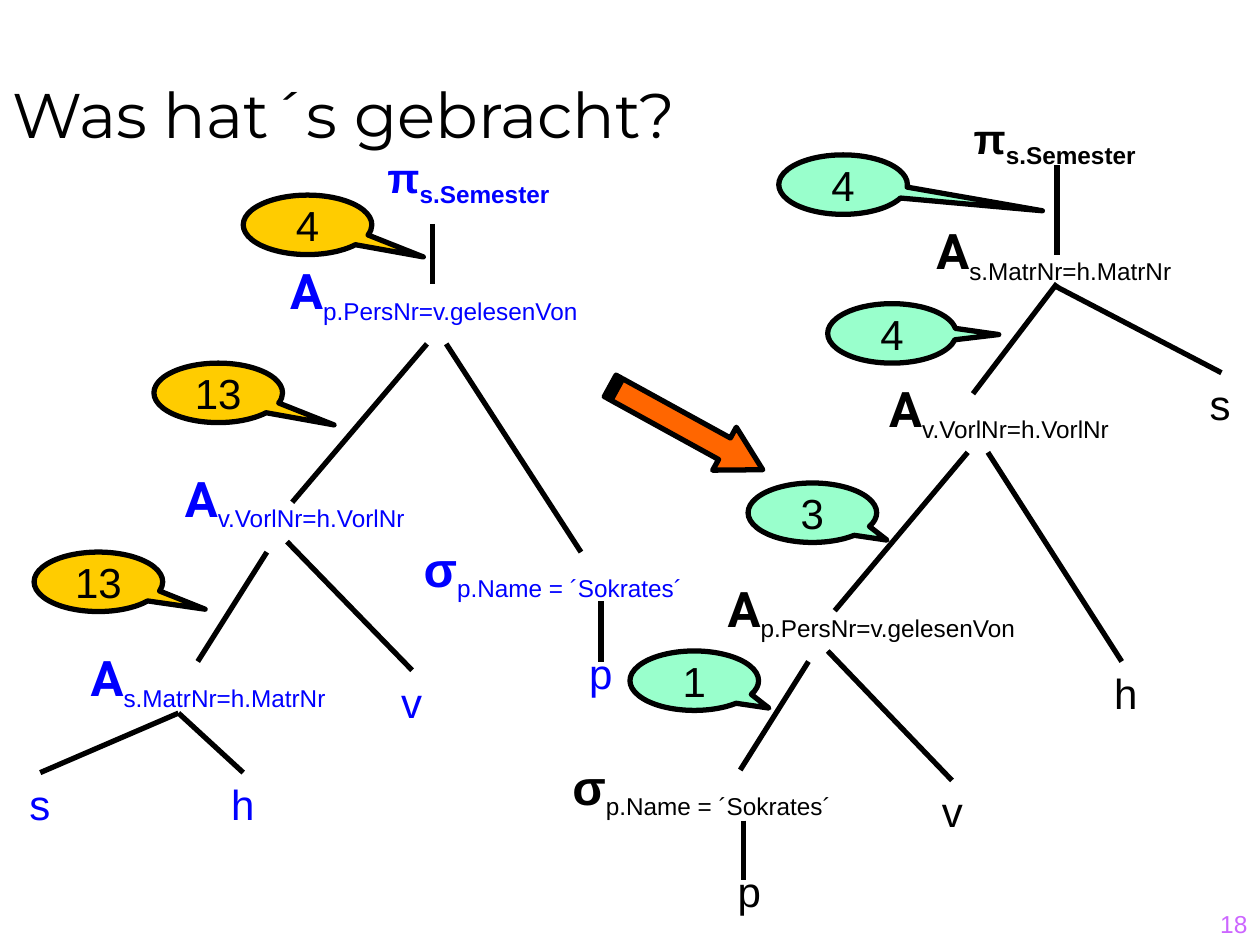
from lxml import etree
from pptx import Presentation
from pptx.dml.color import RGBColor
from pptx.enum.shapes import MSO_CONNECTOR, MSO_SHAPE
from pptx.enum.text import MSO_ANCHOR, MSO_AUTO_SIZE, PP_ALIGN
from pptx.oxml.ns import qn
from pptx.util import Pt

LINE = MSO_CONNECTOR.STRAIGHT
CALLOUT = MSO_SHAPE.OVAL_CALLOUT
ARROW = MSO_SHAPE.STRIPED_RIGHT_ARROW
LEFT, CENTER, RIGHT = PP_ALIGN.LEFT, PP_ALIGN.CENTER, PP_ALIGN.RIGHT
BOTTOM, MIDDLE, TOP = MSO_ANCHOR.BOTTOM, MSO_ANCHOR.MIDDLE, MSO_ANCHOR.TOP
GROW = MSO_AUTO_SIZE.SHAPE_TO_FIT_TEXT
NO_FIT = MSO_AUTO_SIZE.NONE

BLACK = RGBColor(0x00, 0x00, 0x00)
BLUE = RGBColor(0x00, 0x00, 0xFF)
ORANGE = RGBColor(0xFF, 0x66, 0x00)
YELLOW = RGBColor(0xFF, 0xCC, 0x00)
MINT = RGBColor(0x99, 0xFF, 0xCC)
PURPLE = RGBColor(0xCC, 0x66, 0xFF)

BY_PERSON = "p.PersNr=v.gelesenVon"
BY_LECTURE = "v.VorlNr=h.VorlNr"
BY_STUDENT = "s.MatrNr=h.MatrNr"
SOKRATES = "p.Name = ´Sokrates´"
SEMESTER = "s.Semester"

BEFORE = {
    "color": BLUE,
    "fill": YELLOW,
    "operators": [
        ("π", SEMESTER, 178.5, 83, 178.5),
        ("A", BY_PERSON, 127.5, 145.5, 241),
        ("A", BY_LECTURE, 48, 264, 241),
        ("σ", SOKRATES, 224, 304, 184),
        ("A", BY_STUDENT, 0, 366.5, 238),
    ],
    "relations": [("s", 0, 441.5), ("h", 116, 441.5),
                  ("v", 212.5, 383), ("p", 320.5, 366.5)],
    "edges": [
        (247, 128, 247, 162), (244, 196.5, 167, 287),
        (255, 196.5, 332, 315.5), (343.5, 343.5, 343.5, 378),
        (152.5, 315.5, 113, 378), (164, 309.5, 235.5, 383),
        (102, 407.5, 23, 441.5), (102, 407.5, 139, 441.5),
    ],
    "counts": [("4", 139, 111.5, 0.9, 0.54),
               ("13", 88, 207.5, 0.9, 0.54),
               ("13", 19.5, 315.5, 0.83, 0.46)],
}

AFTER = {
    "color": BLACK,
    "fill": MINT,
    "operators": [
        ("π", SEMESTER, 513.5, 60.5, 178.5),
        ("A", BY_STUDENT, 496, 122.5, 212.5),
        ("A", BY_LECTURE, 450.5, 213, 241),
        ("A", BY_PERSON, 377.5, 327, 241),
        ("σ", SOKRATES, 309, 428.5, 184),
    ],
    "relations": [("s", 674.5, 213), ("h", 620.5, 378),
                  ("v", 521.5, 445.5), ("p", 405.5, 491)],
    "edges": [
        (604, 94.5, 604, 145.5), (604, 162, 556, 225),
        (603, 163.5, 698, 213), (553, 258.5, 477, 349),
        (564.5, 258.5, 641, 378), (462, 378, 423, 440),
        (473, 372, 544, 446), (425, 469, 425, 503),
    ],
    "counts": [("4", 445, 88.5, 1.55, 0.44),
               ("4", 473, 173.5, 0.83, 0.02),
               ("3", 427.5, 276, 0.58, 0.46),
               ("1", 360, 372, 0.58, 0.46)],
}


def set_font(font, size, color, name="Arial", bold=False):
    font.size, font.name, font.bold = Pt(size), name, bold
    font.color.rgb = color


def add_text(s, x, y, w, h, align=CENTER, anchor=TOP, fit=GROW):
    tf = s.shapes.add_textbox(Pt(x), Pt(y), Pt(w), Pt(h)).text_frame
    tf.word_wrap, tf.auto_size, tf.vertical_anchor = True, fit, anchor
    p = tf.paragraphs[0]
    p.alignment = align
    return p


def add_operator(s, symbol, condition, x, y, w, color):
    projection = symbol == "π"
    p = add_text(s, x, y, w, 36 if projection else 41)
    r = p.add_run()
    r.text = symbol
    set_font(r.font, 24 if projection else 28, color,
             "Roboto" if symbol == "A" else "Arial", True)
    r = p.add_run()
    r.text = condition
    set_font(r.font, 24, color, bold=projection)
    r._r.get_or_add_rPr().set("baseline", "-25000")


def add_relation(s, name, x, y, color):
    p = add_text(s, x, y, 45.5, 36)
    p.text = name
    set_font(p.font, 24, color)


def add_edge(s, x1, y1, x2, y2):
    line = s.shapes.add_connector(LINE, Pt(x1), Pt(y1), Pt(x2), Pt(y2))
    line.line.color.rgb = BLACK
    line.line.width = Pt(3)
    etree.SubElement(line._element.spPr, qn("a:effectLst"))


def add_outlined(s, kind, x, y, w, h, fill, adjustments):
    sp = s.shapes.add_shape(kind, Pt(x), Pt(y), Pt(w), Pt(h))
    sp.shadow.inherit = False
    sp.fill.solid()
    sp.fill.fore_color.rgb = fill
    sp.line.color.rgb = BLACK
    sp.line.width = Pt(3)
    for i, value in enumerate(adjustments):
        sp.adjustments[i] = value
    return sp


def add_count(s, count, x, y, tip_x, tip_y, fill):
    sp = add_outlined(s, CALLOUT, x, y, 73.5, 34, fill, (tip_x, tip_y))
    tf = sp.text_frame
    tf.word_wrap, tf.vertical_anchor = False, MIDDLE
    p = tf.paragraphs[0]
    p.text, p.alignment = count, CENTER
    set_font(p.font, 24, BLACK)


def add_tree(s, tree):
    for edge in tree["edges"]:
        add_edge(s, *edge)
    for operator in tree["operators"]:
        add_operator(s, *operator, tree["color"])
    for relation in tree["relations"]:
        add_relation(s, *relation, tree["color"])
    for count in tree["counts"]:
        add_count(s, *count, tree["fill"])


def set_title(s, text):
    title = s.shapes.title
    title.left, title.top, title.width, title.height = Pt(0), Pt(0), Pt(720), Pt(90)
    tf = title.text_frame
    tf.word_wrap, tf.auto_size, tf.vertical_anchor = True, NO_FIT, BOTTOM
    p = tf.paragraphs[0]
    p.text, p.alignment = text, LEFT
    set_font(p.font, 36, BLACK, "Montserrat")


def main():
    prs = Presentation()
    prs.slide_width, prs.slide_height = Pt(720), Pt(540)
    s = prs.slides.add_slide(prs.slide_layouts[5])
    set_title(s, "Was hat´s gebracht?")
    p = add_text(s, 570, 504, 150, 36, RIGHT, BOTTOM, NO_FIT)
    p.text = "18"
    set_font(p.font, 14, PURPLE)
    arrow = add_outlined(s, ARROW, 342.5, 230.5, 99.5, 28, ORANGE, (0.5, 0.89))
    arrow.rotation = 28.8
    add_tree(s, BEFORE)
    add_tree(s, AFTER)
    prs.save("out.pptx")


if __name__ == "__main__":
    main()
